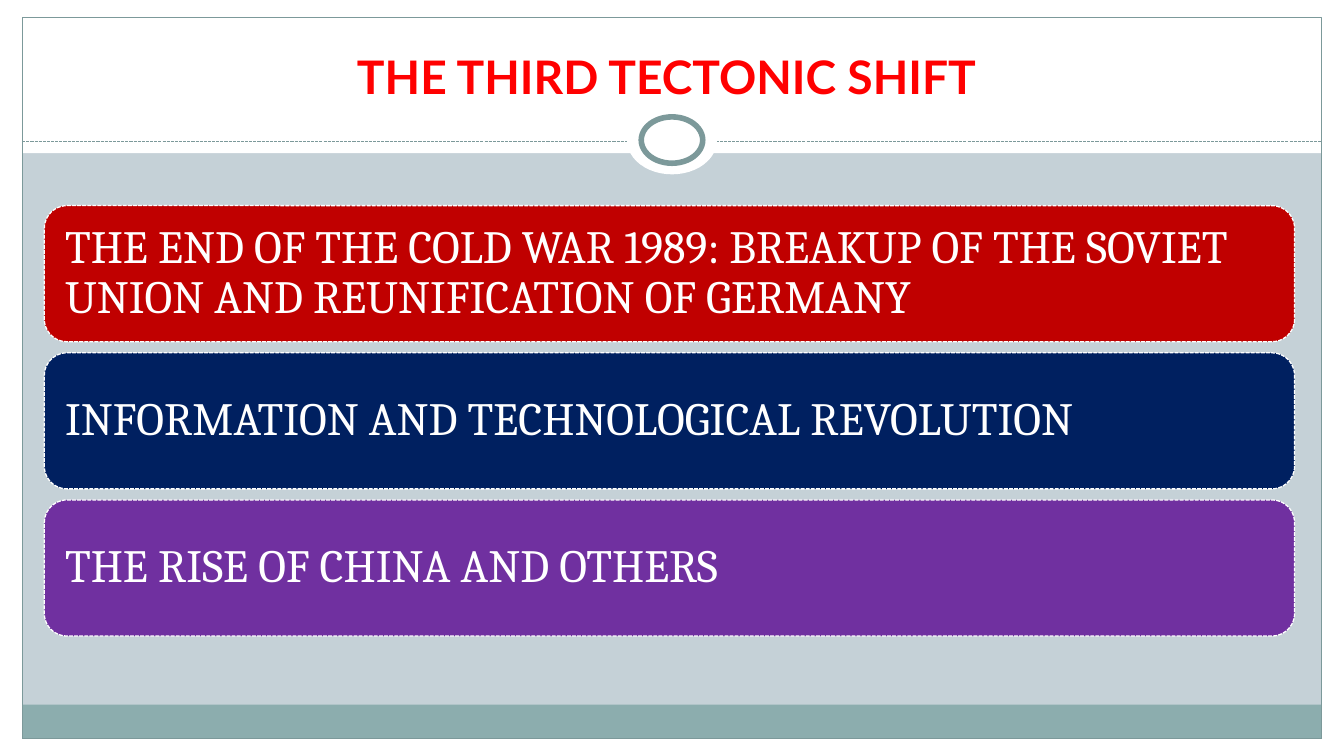
from pptx import Presentation
from pptx.dml.color import RGBColor
from pptx.enum.dml import MSO_LINE
from pptx.enum.shapes import MSO_CONNECTOR, MSO_SHAPE
from pptx.enum.text import MSO_ANCHOR, PP_ALIGN
from pptx.oxml.ns import qn
from pptx.util import Pt
from lxml.etree import SubElement

EMU_PER_PX = 9144
WIDTH, HEIGHT = 1333, 750
COLORS = {
    "white": "FFFFFF", "backdrop": "C5D1D7", "band": "8CADAE", "rule": "7C999A",
    "title": "FF0000", "red": "C00000", "navy": "002060", "purple": "7030A0",
}
SHIFTS = [
    ("THE END OF THE COLD WAR 1989: BREAKUP OF THE SOVIET "
     "UNION AND REUNIFICATION OF GERMANY", "red"),
    ("INFORMATION AND TECHNOLOGICAL REVOLUTION", "navy"),
    ("THE RISE OF CHINA AND OTHERS", "purple"),
]


def px(n):
    """Turn px into EMU."""
    return n * EMU_PER_PX


def rgb(name):
    """Look up a named colour."""
    return RGBColor.from_string(COLORS[name])


def style_line(line, color, width, dash=None):
    """Set the colour, width and dash of a line."""
    line.color.rgb = rgb(color)
    line.width = Pt(width)
    if dash:
        line.dash_style = dash


def add_shape(slide, kind, box, fill=None):
    """Add a flat shape without an outline."""
    sp = slide.shapes.add_shape(kind, *map(px, box))
    sp.shadow.inherit = False
    sp.line.fill.background()
    if fill:
        sp.fill.solid()
        sp.fill.fore_color.rgb = rgb(fill)
    else:
        sp.fill.background()
    return sp


def write(sp, text, font, color, anchor, align):
    """Write one paragraph into a shape."""
    tf = sp.text_frame
    tf.word_wrap = True
    tf.vertical_anchor = anchor
    p = tf.paragraphs[0]
    p.text = text
    p.alignment = align
    p.font.name = font
    p.font.size = Pt(33)
    p.font.color.rgb = rgb(color)
    return p


def add_frame(slide, box):
    """Draw the white margins, the bottom band and the thin frame."""
    x, y, w, h = box
    right, bottom = x + w, y + h
    for margin in [(0, bottom, WIDTH, HEIGHT - bottom), (0, 0, WIDTH, 152),
                   (0, 0, x, HEIGHT), (right, 0, WIDTH - right, HEIGHT)]:
        add_shape(slide, MSO_SHAPE.RECTANGLE, margin, "white")
    add_shape(slide, MSO_SHAPE.RECTANGLE, (x, bottom - 34, w, 34), "band")
    style_line(add_shape(slide, MSO_SHAPE.RECTANGLE, box).line, "rule", 0.75)


def add_divider(slide, box):
    """Draw the dashed rule with the ring at its middle."""
    x, y, w, h = box
    middle = y + h // 2
    rule = slide.shapes.add_connector(
        MSO_CONNECTOR.STRAIGHT, px(x), px(middle), px(x + w), px(middle))
    style_line(rule.line, "rule", 0.75, MSO_LINE.SQUARE_DOT)
    SubElement(rule._element.spPr, qn("a:effectLst"))
    left = x + (w - 89) // 2
    add_shape(slide, MSO_SHAPE.OVAL, (left, y + 1, 89, h - 3), "white")
    ring = add_shape(slide, MSO_SHAPE.OVAL, (left + 14, y + 11, 61, 46), "white")
    style_line(ring.line, "rule", 4)


def add_title(slide, box):
    """Write the centred title."""
    sp = slide.shapes.add_textbox(*map(px, box))
    p = write(sp, "THE THIRD TECTONIC SHIFT ", "Lato", "title",
              MSO_ANCHOR.BOTTOM, PP_ALIGN.CENTER)
    p.font.bold = True


def add_shifts(slide, box, gap=11):
    """Stack the shifts as equal rounded bars."""
    x, y, w, h = box
    bar = (h - gap * (len(SHIFTS) - 1)) // len(SHIFTS)
    for i, (text, color) in enumerate(SHIFTS):
        sp = add_shape(slide, MSO_SHAPE.ROUNDED_RECTANGLE,
                       (x, y + i * (bar + gap), w, bar), color)
        style_line(sp.line, "white", 0.9, MSO_LINE.SQUARE_DOT)
        tf = sp.text_frame
        tf.margin_left = tf.margin_right = tf.margin_top = tf.margin_bottom = px(14)
        p = write(sp, text, "Cambria", "white", MSO_ANCHOR.MIDDLE, PP_ALIGN.LEFT)
        p.line_spacing = 0.9


def main():
    """Build and save the slide."""
    prs = Presentation()
    prs.slide_width, prs.slide_height = px(WIDTH), px(HEIGHT)
    slide = prs.slides.add_slide(prs.slide_layouts[6])
    slide.background.fill.solid()
    slide.background.fill.fore_color.rgb = rgb("backdrop")
    add_frame(slide, (22, 17, 1289, 716))
    add_divider(slide, (22, 105, 1289, 70))
    add_title(slide, (44, 25, 1244, 83))
    add_shifts(slide, (44, 204, 1240, 427))
    prs.save("out.pptx")


if __name__ == "__main__":
    main()
